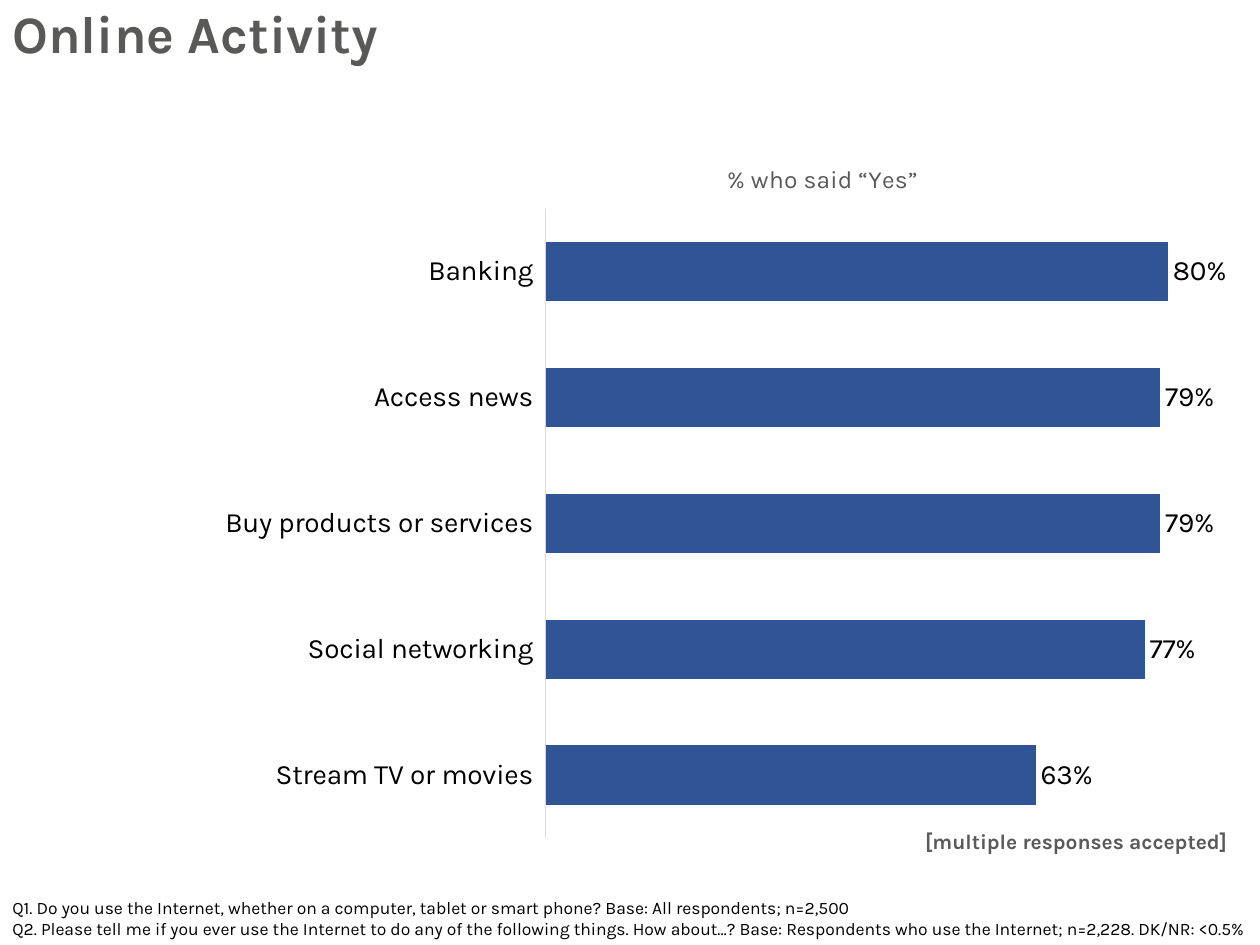
from pptx import Presentation
from pptx.chart.data import CategoryChartData
from pptx.dml.color import RGBColor
from pptx.enum.chart import XL_CHART_TYPE as ChartType
from pptx.enum.chart import XL_LABEL_POSITION as LabelPos
from pptx.enum.chart import XL_TICK_LABEL_POSITION as TickLabelPos
from pptx.enum.chart import XL_TICK_MARK as TickMark
from pptx.enum.text import MSO_ANCHOR as Anchor
from pptx.oxml import parse_xml
from pptx.oxml.ns import nsdecls, qn
from pptx.util import Pt

BLACK = RGBColor(0x00, 0x00, 0x00)
HEADING = RGBColor(0x59, 0x59, 0x58)
GREY = RGBColor(0x59, 0x59, 0x59)
AXIS = RGBColor(0xD9, 0xD9, 0xD9)
BLUE = RGBColor(0x2F, 0x55, 0x97)

ACTIVITIES = {
    "Stream TV or movies": 0.63,
    "Social networking": 0.77,
    "Buy products or services": 0.79,
    "Access news": 0.79,
    "Banking": 0.8,
}
QUESTIONS = [
    "Q1. Do you use the Internet, whether on a computer, tablet or smart phone? "
    "Base: All respondents; n=2,500",
    "Q2. Please tell me if you ever use the Internet to do any of the following things. "
    "How about…? Base: Respondents who use the Internet; n=2,228. DK/NR: <0.5%",
]


class SlideBuilder:
    """Hold the survey style and the current slide, and add its elements."""

    def __init__(self, prs, font="Karla"):
        self.font = font
        self.slide = prs.slides.add_slide(prs.slide_layouts[6])

    def style(self, font, size, color, bold=False):
        font.name = self.font
        font.size = Pt(size)
        font.bold = bold
        font.color.rgb = color

    def text(self, box, lines, size, color, bold=False, anchor=Anchor.TOP, spacing=1.0):
        sp = self.slide.shapes.add_textbox(*map(Pt, box))
        tf = sp.text_frame
        tf.word_wrap = True
        tf.vertical_anchor = anchor
        for i, line in enumerate(lines):
            p = tf.add_paragraph() if i else tf.paragraphs[0]
            p.line_spacing = spacing
            r = p.add_run()
            r.text = line
            self.style(r.font, size, color, bold)

    def place(self, parent, index, target="", **fractions):
        for old in parent.findall(qn("c:layout")):
            parent.remove(old)
        modes = "".join(f'<c:{k}Mode val="edge"/>' for k in "xy")
        values = "".join(f'<c:{k} val="{v}"/>' for k, v in fractions.items())
        parent.insert(index, parse_xml(
            f'<c:layout {nsdecls("c")}><c:manualLayout>{target}{modes}{values}'
            "</c:manualLayout></c:layout>"))

    def bar_chart(self, box, title, data, maximum):
        chart_data = CategoryChartData(number_format="0%")
        chart_data.categories = list(data)
        chart_data.add_series("Series 1", list(data.values()))
        chart = self.slide.shapes.add_chart(
            ChartType.BAR_CLUSTERED, *map(Pt, box), chart_data).chart
        self.style(chart.font, 16, BLACK)
        chart.has_legend = False

        chart.has_title = True
        r = chart.chart_title.text_frame.paragraphs[0].add_run()
        r.text = title
        self.style(r.font, 14, GREY)
        self.place(chart.chart_title._element, 1, x=0.58, y=0.05)
        self.place(chart._chartSpace.chart.plotArea, 0, '<c:layoutTarget val="inner"/>',
                   x=0.438, y=0.119, w=0.562, h=0.876)

        cat = chart.category_axis
        cat.major_tick_mark = cat.minor_tick_mark = TickMark.NONE
        cat.tick_label_position = TickLabelPos.LOW
        cat.format.line.color.rgb = AXIS
        cat.format.line.width = Pt(0.75)
        self.style(cat.tick_labels.font, 16, BLACK)
        val = chart.value_axis
        val.minimum_scale, val.maximum_scale = 0, maximum
        val.has_major_gridlines = False
        val.visible = False

        plot = chart.plots[0]
        plot.gap_width = 112
        plot.vary_by_categories = False
        series = plot.series[0]
        series.format.fill.solid()
        series.format.fill.fore_color.rgb = BLUE
        labels = series.data_labels
        labels.show_value = True
        labels.position = LabelPos.OUTSIDE_END
        labels.number_format = "0%"
        labels.number_format_is_linked = False
        self.style(labels.font, 16, BLACK)


def main():
    prs = Presentation()
    prs.slide_width, prs.slide_height = Pt(720), Pt(540)
    s = SlideBuilder(prs)
    s.text((0, 509, 720, 31.5), QUESTIONS, 10, BLACK)
    s.text((0, 2, 720, 38), ["Online Activity"], 30, HEADING, True, Anchor.MIDDLE, 0.9)
    s.bar_chart((0, 70.5, 712, 410.5), "% who said “Yes”", ACTIVITIES, 0.9)
    s.text((521.5, 470, 250, 21.5), ["[multiple responses accepted]"], 12, GREY, True)
    prs.save("out.pptx")


if __name__ == "__main__":
    main()
